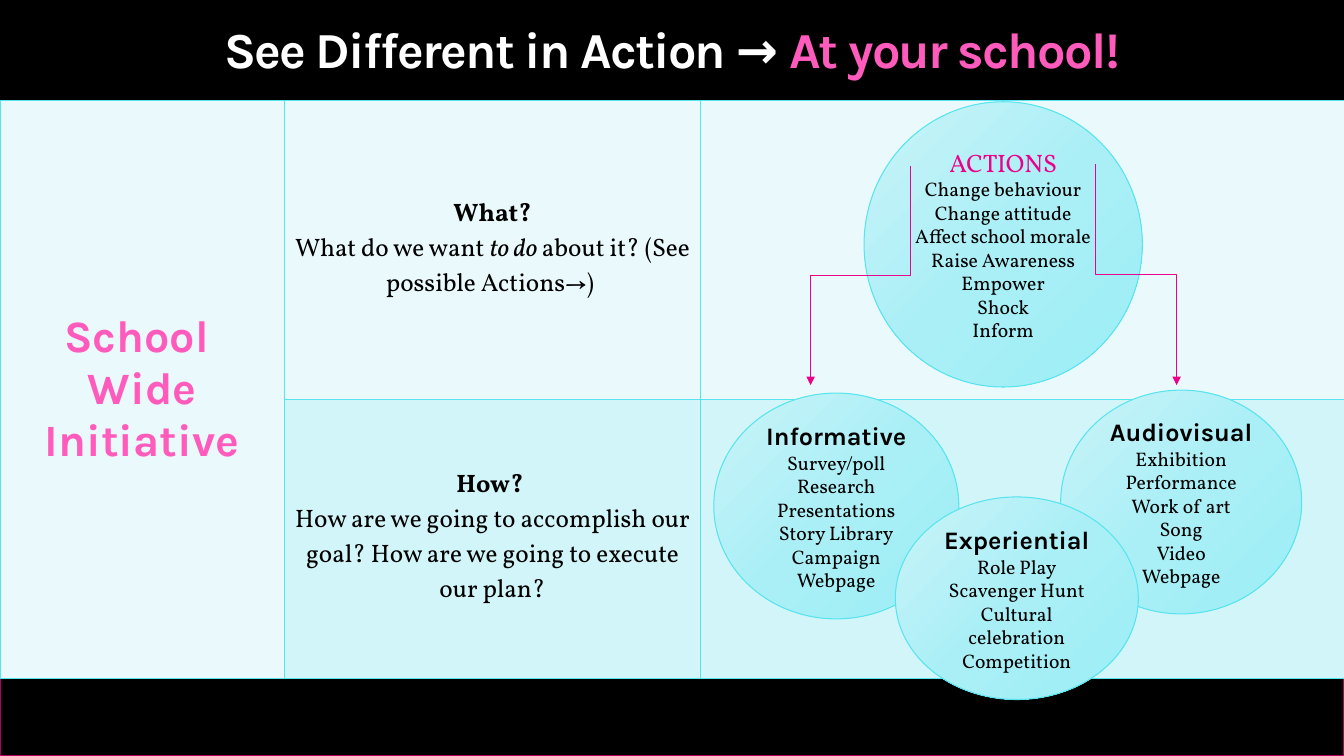
from lxml import etree
from pptx import Presentation
from pptx.dml.color import RGBColor
from pptx.enum.shapes import MSO_CONNECTOR, MSO_SHAPE
from pptx.enum.text import MSO_ANCHOR, PP_ALIGN
from pptx.oxml import parse_xml
from pptx.oxml.ns import nsdecls, qn
from pptx.util import Inches, Pt

ELBOW = MSO_CONNECTOR.ELBOW
RECTANGLE, OVAL = MSO_SHAPE.RECTANGLE, MSO_SHAPE.OVAL
MIDDLE, CENTER = MSO_ANCHOR.MIDDLE, PP_ALIGN.CENTER
HEADING, BODY = "Karla", "Vollkorn"
COLORS = {
    "black": "000000", "white": "FFFFFF", "pink": "FF5BBC", "magenta": "EC008C",
    "plum": "AF0068", "cyan": "57E4EF", "pale": "EAFAFC", "tint": "D1F5F9",
}
OVAL_STOPS = ((0, "C8F4F8"), (50, "ABEFF6"), (100, "9BEEF6"))
OVALS = (
    ((8.57, 1.01, 2.76, 2.83), ("ACTIONS", BODY, "magenta", False),
     ("Change behaviour", "Change attitude", "Affect school morale",
      "Raise Awareness", "Empower", "Shock", "Inform")),
    ((7.08, 3.9, 2.43, 2.24), ("Informative", HEADING, "black", True),
     ("Survey/poll", "Research", "Presentations", "Story Library",
      "Campaign", "Webpage")),
    ((10.52, 3.87, 2.39, 2.22), ("Audiovisual", HEADING, "black", True),
     ("Exhibition", "Performance", "Work of art", "Song", "Video", "Webpage")),
    ((8.88, 4.93, 2.41, 2.01), ("Experiential", HEADING, "black", True),
     ("Role Play", "Scavenger Hunt", "Cultural celebration", "Competition")),
)


def color(name):
    return RGBColor.from_string(COLORS[name])


def add_span(para, text, font, size, tone, bold=False, italic=False):
    span = para.add_run()
    span.text = text
    span.font.name, span.font.size = font, Pt(size)
    span.font.bold, span.font.italic = bold, italic
    span.font.color.rgb = color(tone)
    return span


def write_paragraphs(frame, paragraphs):
    for index, spans in enumerate(paragraphs):
        para = frame.paragraphs[0] if index == 0 else frame.add_paragraph()
        para.alignment = CENTER
        for span in spans:
            add_span(para, *span)


def add_outlined(page, kind, place, line, width):
    shape = page.shapes.add_shape(kind, *map(Inches, place))
    shape.shadow.inherit = False
    shape.line.color.rgb = color(line)
    shape.line.width = Pt(width)
    return shape


def add_bar(page, place, line):
    bar = add_outlined(page, RECTANGLE, place, line, 1)
    bar.fill.solid()
    bar.fill.fore_color.rgb = color("black")


def add_title(page):
    title = page.shapes.title
    title.left, title.top = Inches(0), Inches(-0.38)
    title.width, title.height = Inches(13.33), Inches(1.81)
    frame = title.text_frame
    frame.vertical_anchor = MIDDLE
    frame.word_wrap = True
    para = frame.paragraphs[0]
    para.alignment = CENTER
    para.line_spacing = 0.85
    for text, tone in (("See Different in Action → ", "white"),
                       ("At your school!", "pink")):
        span = add_span(para, text, HEADING, 36, tone, True)
        span.font._element.set("spc", "-120")


def style_cell(cell, fill):
    cell.vertical_anchor = MIDDLE
    properties = cell._tc.get_or_add_tcPr()
    for side in ("lnL", "lnR", "lnT", "lnB"):
        properties.append(parse_xml(
            f'<a:{side} {nsdecls("a")} w="12700"><a:solidFill>'
            f'<a:srgbClr val="{COLORS["cyan"]}"/></a:solidFill></a:{side}>'))
    cell.fill.solid()
    cell.fill.fore_color.rgb = color(fill)


def add_plan_table(page):
    table = page.shapes.add_table(
        2, 3, Inches(0), Inches(1), Inches(13.34), Inches(5.73)).table
    for column, width in zip(table.columns, (2.82, 4.13, 6.39)):
        column.width = Inches(width)
    for row, height in zip(table.rows, (2.96, 2.77)):
        row.height = Inches(height)
    for row, fill in enumerate(("pale", "tint")):
        for column in range(3):
            style_cell(table.cell(row, column), fill)
    table.cell(0, 0).merge(table.cell(1, 0))
    initiative = (HEADING, 32, "pink", True)
    question = (BODY, 18, "black")
    write_paragraphs(table.cell(0, 0).text_frame, (
        [("School ", *initiative)], [("Wide Initiative", *initiative)]))
    write_paragraphs(table.cell(0, 1).text_frame, (
        [("What?", *question, True)],
        [("What do we want ", *question), ("to do ", *question, False, True),
         ("about it? (See possible Actions→) ", *question)]))
    write_paragraphs(table.cell(1, 1).text_frame, (
        [("How? ", *question, True)],
        [("How are we going to accomplish our goal? "
          "How are we going to execute our plan?", *question)]))


def add_oval(page, place, heading, items):
    oval = add_outlined(page, OVAL, place, "cyan", 0.75)
    oval.fill.gradient()
    oval.fill.gradient_angle = 315
    stops = oval._element.spPr.find(qn("a:gradFill")).find(qn("a:gsLst"))
    for stop in list(stops):
        stops.remove(stop)
    for position, value in OVAL_STOPS:
        stop = etree.SubElement(stops, qn("a:gs"), pos=str(position * 1000))
        etree.SubElement(stop, qn("a:srgbClr"), val=value)
    text, font, tone, bold = heading
    frame = oval.text_frame
    frame.word_wrap = True
    frame.vertical_anchor = MIDDLE
    write_paragraphs(frame, [[(text, font, 18, tone, bold)]] + [
        [(item, BODY, 14, "black")] for item in items])


def add_drop_arrow(page, start_x, start_y, end_x, end_y):
    run, drop = end_x - start_x, end_y - start_y
    middle_x, middle_y = (start_x + end_x) / 2, (start_y + end_y) / 2
    reach = drop / 2 if run < 0 else -drop / 2
    arrow = page.shapes.add_connector(
        ELBOW, Inches(middle_x - reach), Inches(middle_y - abs(run) / 2),
        Inches(middle_x + reach), Inches(middle_y + abs(run) / 2))
    arrow.line.color.rgb = color("magenta")
    arrow.line.width = Pt(0.75)
    properties = arrow._element.spPr
    turn = 90 if run < 0 else 270
    properties.find(qn("a:xfrm")).set("rot", str(turn * 60000))
    etree.SubElement(properties.find(qn("a:ln")), qn("a:tailEnd"), type="triangle")
    etree.SubElement(properties, qn("a:effectLst"))


def main():
    deck = Presentation()
    deck.slide_width, deck.slide_height = Inches(13.33), Inches(7.5)
    page = deck.slides.add_slide(deck.slide_layouts[5])
    add_bar(page, (0, 6.68, 13.33, 0.82), "plum")
    add_bar(page, (0, 0, 13.33, 1.01), "black")
    title = page.shapes.title._element
    title.getparent().append(title)
    add_title(page)
    add_plan_table(page)
    for place, heading, items in OVALS:
        add_oval(page, place, heading, items)
    add_drop_arrow(page, 9.03, 1.65, 8.04, 3.82)
    add_drop_arrow(page, 10.87, 1.63, 11.67, 3.82)
    deck.save("out.pptx")


if __name__ == "__main__":
    main()
